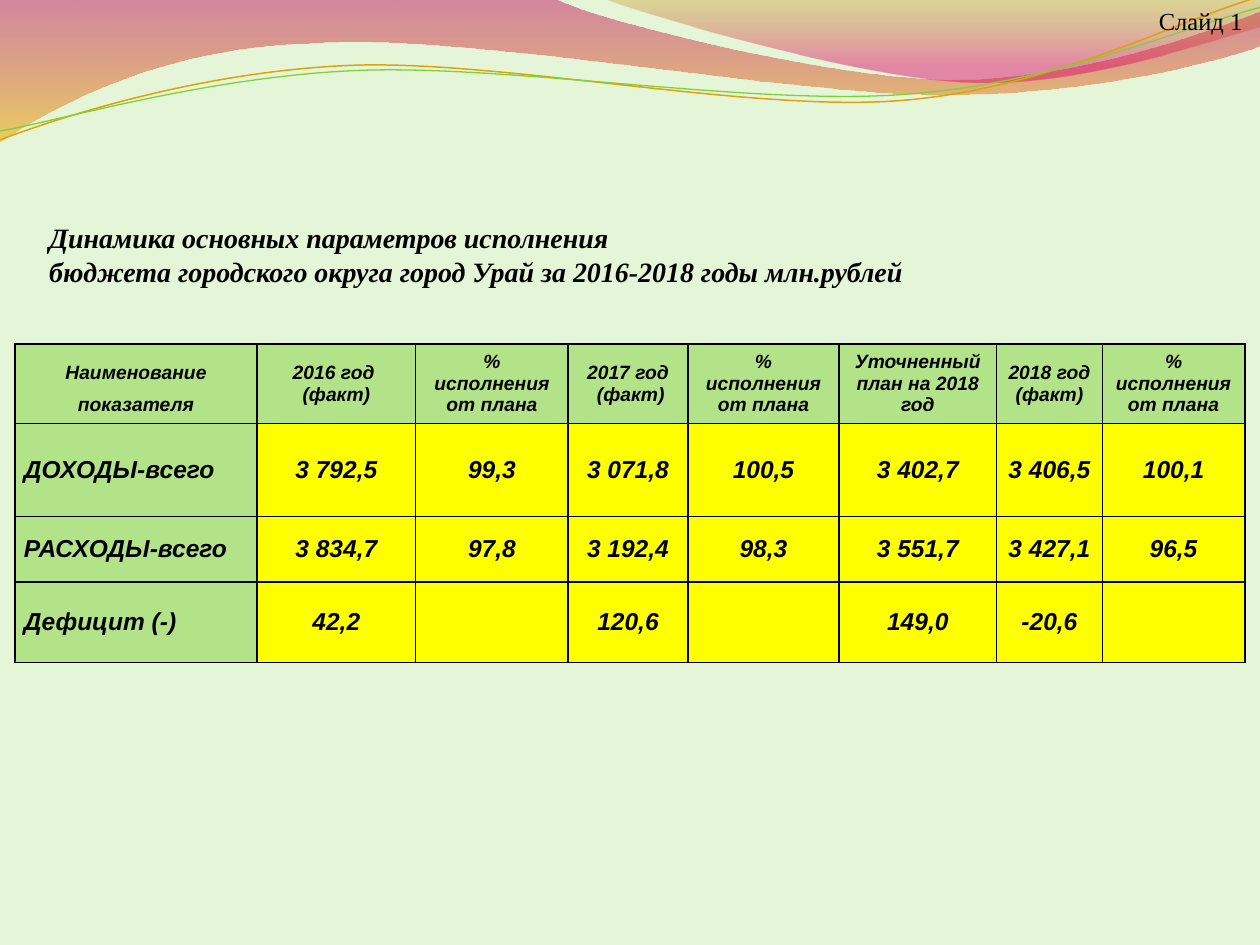
from lxml.etree import SubElement
from pptx import Presentation
from pptx.dml.color import RGBColor
from pptx.enum.text import MSO_ANCHOR as Anchor, MSO_AUTO_SIZE as AutoSize, PP_ALIGN as Align
from pptx.oxml import parse_xml
from pptx.oxml.ns import nsdecls, qn
from pptx.util import Inches, Pt

COLORS = {
    "background": "E5F6D8", "text": "000000", "border": "000000",
    "header": "B2E389", "value": "FFFF00",
    "crimson": "BD0059", "amber": "F0AB00", "olive": "C38B00", "pink": "E1006B",
    "orange_line": "E0A209", "green_line": "7FD13B",
}

# Each wave is a start point, then lines (2 numbers) and Bézier curves (6 numbers)
LEFT_WAVE = [
    (0, 0), (4.4, -0.01),
    (4.76, 0.17, 6.64, 0.63, 7.58, 0.63), (8.53, 0.63, 9.58, 0.26, 10, 0.09),
    (10.01, 0.36),
    (9.83, 0.44, 8.7, 0.76, 7.46, 0.75), (6.22, 0.75, 3.82, 0.28, 2.57, 0.34),
    (1.29, 0.36, 0.46, 0.83, -0.01, 1.13), (0, 0),
]
RIGHT_WAVE = [
    (4.79, -0.01),
    (5.09, 0.11, 6.82, 0.62, 7.69, 0.65), (8.56, 0.69, 9.61, 0.32, 10, 0.21),
    (10, 0), (4.79, -0.01),
]
ORANGE_WAVE = [
    (0, 1.11),
    (0.48, 0.93, 1.58, 0.57, 2.77, 0.52), (3.95, 0.47, 5.93, 0.89, 7.13, 0.8),
    (8.33, 0.71, 9.38, 0.15, 9.98, -0.02),
]
GREEN_WAVE = [
    (0, 1.04),
    (0.47, 0.96, 1.64, 0.61, 2.83, 0.56), (4.03, 0.51, 5.97, 0.84, 7.17, 0.75),
    (8.36, 0.67, 9.41, 0.21, 10, 0.06),
]

TITLE = ("Динамика основных параметров исполнения\n"
         "бюджета городского округа город Урай за 2016-2018 годы млн.рублей")
COLUMN_WIDTHS = [1.92, 1.26, 1.21, 0.95, 1.2, 1.25, 0.84, 1.13]
ROW_HEIGHTS = [0.63, 0.74, 0.52, 0.64]
PERCENT = "% исполнения от плана"
TABLE_ROWS = [
    ["Наименование показателя", "2016 год \n(факт)", PERCENT, "2017 год\n (факт)", PERCENT,
     "Уточненный план на 2018 год", "2018 год (факт)", PERCENT],
    ["ДОХОДЫ-всего", "3 792,5", "99,3", "3 071,8", "100,5", "3 402,7", "3 406,5", "100,1"],
    ["РАСХОДЫ-всего", "3 834,7", "97,8", "3 192,4", "98,3", "3 551,7", "3 427,1", "96,5"],
    ["Дефицит (-)", "42,2", "", "120,6", "", "149,0", "-20,6", ""],
]


def color(name):
    return RGBColor.from_string(COLORS[name])


def write_text(frame, text, size, font="Times New Roman", bold=False, italic=False,
               align=Align.LEFT, indent=0, spacing=None):
    """Write one paragraph per line of text."""
    for index, line in enumerate(text.split("\n")):
        paragraph = frame.paragraphs[0] if index == 0 else frame.add_paragraph()
        paragraph.alignment = align
        if spacing:
            paragraph.line_spacing = spacing
        if indent:
            properties = paragraph._p.get_or_add_pPr()
            properties.set("marL", "0")
            properties.set("indent", str(Inches(indent)))
        if line:
            run = paragraph.add_run()
            run.text = line
            run.font.name, run.font.size = font, Pt(size)
            run.font.bold, run.font.italic = bold, italic
            run.font.color.rgb = color("text")


class SlideBuilder:
    def __init__(self, presentation):
        self.slide = presentation.slides.add_slide(presentation.slide_layouts[5])
        fill = self.slide.background.fill
        fill.solid()
        fill.fore_color.rgb = color("background")

    def outline(self, wave, close):
        """Join the end points with lines, then bend the curved segments."""
        ends = [(Inches(segment[-2]), Inches(segment[-1])) for segment in wave]
        builder = self.slide.shapes.build_freeform(*ends[0])
        builder.add_line_segments(ends[1:], close=close)
        shape = builder.convert_to_shape()
        shape.shadow.inherit = False
        lines = list(shape._element.spPr.iter(qn("a:lnTo")))
        for line, segment in zip(lines, wave[1:]):
            if len(segment) == 6:
                line.tag = qn("a:cubicBezTo")
                line.remove(line[0])
                for x, y in zip(segment[::2], segment[1::2]):
                    SubElement(line, qn("a:pt"), x=str(Inches(x) - shape.left),
                               y=str(Inches(y) - shape.top))
        return shape

    def gradient_wave(self, wave, stops):
        """Each stop is position, colour name and opacity in percent."""
        shape = self.outline(wave, close=True)
        shape.line.fill.background()
        shape.fill.gradient()
        shape.fill.gradient_angle = 270
        for stop, (position, name, _) in zip(shape.fill.gradient_stops, stops):
            stop.position = position
            stop.color.rgb = color(name)
        for element, (_, _, opacity) in zip(shape._element.spPr.iter(qn("a:srgbClr")), stops):
            SubElement(element, qn("a:alpha"), val=str(opacity * 1000))

    def line_wave(self, wave, name, width):
        shape = self.outline(wave, close=False)
        shape.fill.background()
        shape.line.color.rgb = color(name)
        shape.line.width = Pt(width)

    def title(self, text, left, top, width, height):
        shape = self.slide.shapes.title
        shape.left, shape.top = Inches(left), Inches(top)
        shape.width, shape.height = Inches(width), Inches(height)
        shape.text_frame.auto_size = AutoSize.NONE
        write_text(shape.text_frame, text, 16, bold=True, italic=True, indent=0.49)

    def label(self, text, left, top, width, height):
        box = self.slide.shapes.add_textbox(
            Inches(left), Inches(top), Inches(width), Inches(height))
        box.text_frame.word_wrap = True
        write_text(box.text_frame, text, 14, align=Align.CENTER)

    def table(self, rows, left, top):
        table = self.slide.shapes.add_table(
            len(rows), len(COLUMN_WIDTHS), Inches(left), Inches(top),
            Inches(sum(COLUMN_WIDTHS)), Inches(sum(ROW_HEIGHTS))).table
        table.first_row = table.horz_banding = False
        for column, width in zip(table.columns, COLUMN_WIDTHS):
            column.width = Inches(width)
        for row, height in zip(table.rows, ROW_HEIGHTS):
            row.height = Inches(height)
        for r, texts in enumerate(rows):
            for c, text in enumerate(texts):
                self.cell(table.cell(r, c), text, in_header=r == 0, in_names=c == 0)

    def cell(self, cell, text, in_header, in_names):
        cell.vertical_anchor = Anchor.MIDDLE
        cell.margin_left = cell.margin_right = Inches(0.07)
        cell.margin_top = cell.margin_bottom = 0
        write_text(cell.text_frame, text, 11 if in_header else 14, font="Arial",
                   bold=True, italic=True,
                   align=Align.LEFT if in_names and not in_header else Align.CENTER,
                   spacing=1.5 if in_names and in_header else None)
        properties = cell._tc.get_or_add_tcPr()
        for side in ("lnL", "lnR", "lnT", "lnB"):
            properties.append(parse_xml(
                f'<a:{side} {nsdecls("a")} w="{Pt(1)}"><a:solidFill>'
                f'<a:srgbClr val="{COLORS["border"]}"/></a:solidFill></a:{side}>'))
        cell.fill.solid()
        cell.fill.fore_color.rgb = color("header" if in_header or in_names else "value")


def main():
    presentation = Presentation()
    presentation.slide_width, presentation.slide_height = Inches(10), Inches(7.5)
    builder = SlideBuilder(presentation)

    # Decorative waves
    builder.gradient_wave(LEFT_WAVE, [(0, "crimson", 45), (1, "amber", 55)])
    builder.gradient_wave(RIGHT_WAVE, [(0, "olive", 30), (0.8, "pink", 45)])
    builder.line_wave(ORANGE_WAVE, "orange_line", 0.85)
    builder.line_wave(GREEN_WAVE, "green_line", 0.75)

    # Title, budget table and slide label
    builder.title(TITLE, -0.2, 1.7, 8.98, 0.64)
    builder.table(TABLE_ROWS, 0.12, 2.73)
    builder.label("Слайд 1", 9.06, 0, 0.94, 0.34)

    presentation.save("out.pptx")


if __name__ == "__main__":
    main()
